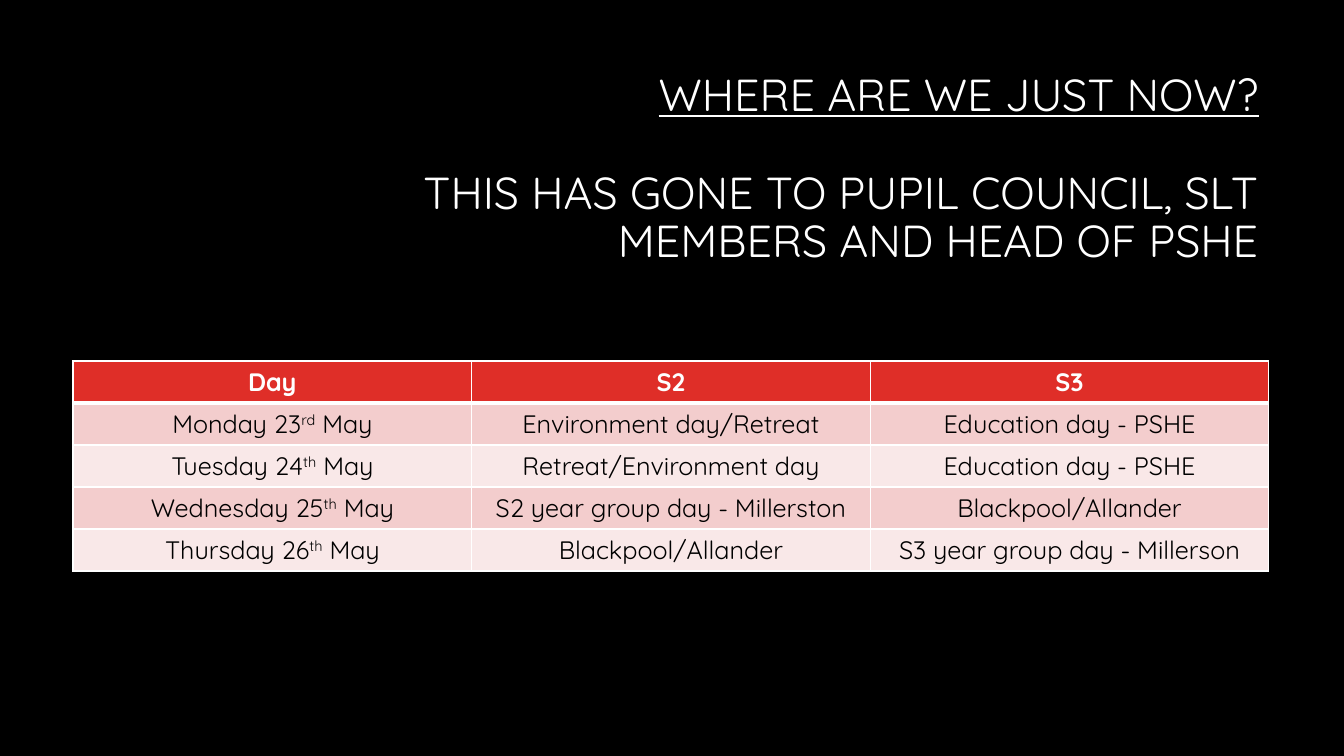
import pptx
import pptx.dml.color
import pptx.enum.text
import pptx.oxml
import pptx.oxml.ns
import pptx.util

PX = 9144000 / 1008  # EMU in one px, at 100.8 px to the inch
THEME = {
    "font": "Quicksand",
    "title_size": 32,
    "table_size": 18,
    "background": "000000",
    "light": "FFFFFF",
    "dark": "000000",
    "header": "DF2E28",
    "bands": ["F3CDCD", "F9E8E8"],
}
ALIGN = pptx.enum.text.PP_ALIGN
ANCHOR = pptx.enum.text.MSO_ANCHOR


def px(length):
    return pptx.util.Emu(round(length * PX))


def add_run(paragraph, text, size, color, **formats):
    run = paragraph.add_run()
    run.text = text
    formats.update(name=THEME["font"], size=pptx.util.Pt(size))
    for attribute, value in formats.items():
        setattr(run.font, attribute, value)
    run.font.color.rgb = pptx.dml.color.RGBColor.from_string(color)
    return run


presentation = pptx.Presentation()
presentation.slide_width, presentation.slide_height = px(1344), px(756)
slide = presentation.slides.add_slide(presentation.slide_layouts[5])
slide.background.fill.solid()
slide.background.fill.fore_color.rgb = pptx.dml.color.RGBColor.from_string(THEME["background"])

# Title: an underlined question, then the answer below it
heading = slide.shapes.title
heading.left, heading.top, heading.width, heading.height = px(320), px(99), px(949), px(142)
heading_frame = heading.text_frame
heading_frame.word_wrap = True
heading_frame.auto_size = pptx.enum.text.MSO_AUTO_SIZE.NONE
heading_frame.vertical_anchor = ANCHOR.MIDDLE
question = heading_frame.paragraphs[0]
answer = heading_frame.add_paragraph()
for paragraph, text, underline, gap in [
    (question, "WHERE ARE WE JUST NOW?", True, 0),
    (answer, "THIS HAS GONE TO PUPIL COUNCIL, SLT MEMBERS AND HEAD OF PSHE", False, 35),
]:
    paragraph.alignment = ALIGN.RIGHT
    paragraph.line_spacing = 0.9
    paragraph.space_before = pptx.util.Pt(gap)
    add_run(paragraph, text, THEME["title_size"], THEME["light"], underline=underline)

# Timetable: each cell is a list of text parts, the second one raised
timetable = [
    [["Day"], ["S2"], ["S3"]],
    [["Monday 23", "rd", " May"], ["Environment day/Retreat"], ["Education day - PSHE"]],
    [["Tuesday 24", "th", " May"], ["Retreat/Environment day"], ["Education day - PSHE"]],
    [["Wednesday 25", "th", " May"], ["S2 year group day - Millerston"], ["Blackpool/Allander"]],
    [["Thursday 26", "th", " May"], ["Blackpool/Allander"], ["S3 year group day - Millerson"]],
]
table = slide.shapes.add_table(
    len(timetable), len(timetable[0]), px(73), px(361), px(1196), px(42 * len(timetable))
).table
table.horz_banding = False

for row_index, row in enumerate(timetable):
    is_header = row_index == 0
    fill = THEME["header"] if is_header else THEME["bands"][(row_index - 1) % 2]
    color = THEME["light"] if is_header else THEME["dark"]
    border_points = {
        "lnL": 1,
        "lnR": 1,
        "lnT": 3 if row_index == 1 else 1,
        "lnB": 3 if is_header else 1,
    }
    for column_index, parts in enumerate(row):
        cell = table.cell(row_index, column_index)
        paragraph = cell.text_frame.paragraphs[0]
        paragraph.alignment = ALIGN.CENTER
        for part_index, part in enumerate(parts):
            run = add_run(paragraph, part, THEME["table_size"], color, bold=is_header)
            if part_index == 1:
                run.font._element.set("baseline", "30000")
        properties = cell._tc.get_or_add_tcPr()
        for side, points in border_points.items():
            properties.append(pptx.oxml.parse_xml(
                f'<a:{side} {pptx.oxml.ns.nsdecls("a")} w="{pptx.util.Pt(points)}">'
                f'<a:solidFill><a:srgbClr val="{THEME["light"]}"/></a:solidFill></a:{side}>'
            ))
        cell.fill.solid()
        cell.fill.fore_color.rgb = pptx.dml.color.RGBColor.from_string(fill)

presentation.save("out.pptx")
